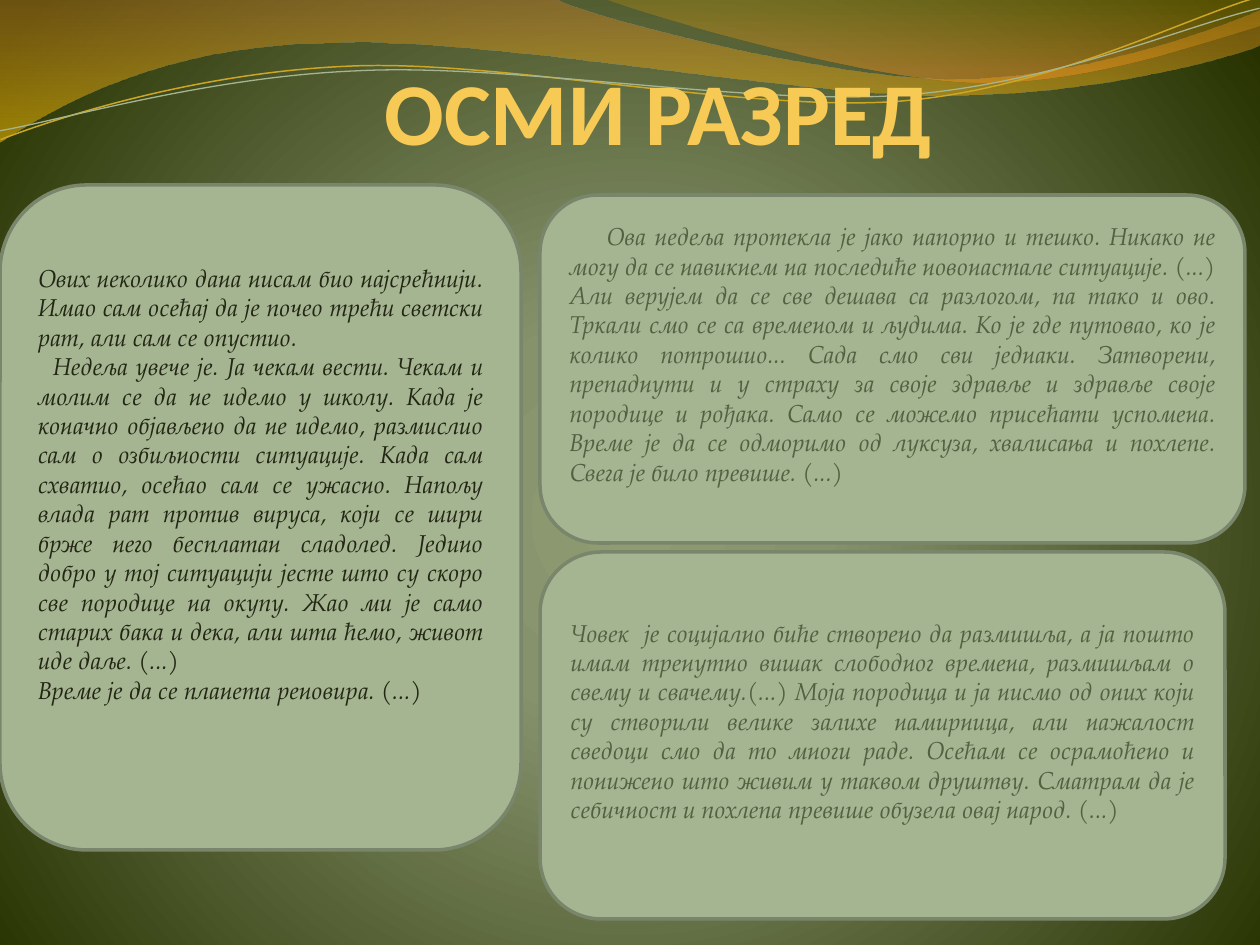
from itertools import islice

from lxml import etree
from pptx import Presentation
from pptx.dml.color import RGBColor
from pptx.enum.shapes import MSO_SHAPE
from pptx.enum.text import MSO_ANCHOR, MSO_AUTO_SIZE, PP_ALIGN
from pptx.oxml.ns import qn
from pptx.util import Emu, Pt

ALTERNATE = MSO_SHAPE.FLOWCHART_ALTERNATE_PROCESS
ROUNDED = MSO_SHAPE.ROUNDED_RECTANGLE
MIDDLE, BOTTOM = MSO_ANCHOR.MIDDLE, MSO_ANCHOR.BOTTOM
CENTER, JUSTIFY = PP_ALIGN.CENTER, PP_ALIGN.JUSTIFY
NO_FIT = MSO_AUTO_SIZE.NONE

SAGE = RGBColor(0xA5, 0xB5, 0x92)
SAGE_EDGE = RGBColor(0x7A, 0x86, 0x6C)
DARK_TEXT = RGBColor(0x22, 0x26, 0x13)
GREEN_TEXT = RGBColor(0x53, 0x61, 0x42)
GOLD = RGBColor(0xF7, 0xCA, 0x56)
GOLD_LINE = RGBColor(0xCC, 0xA6, 0x24)
OLIVE_LIGHT = RGBColor(0x8F, 0x9B, 0x72)
OLIVE = RGBColor(0x86, 0x92, 0x6C)
OLIVE_DARK = RGBColor(0x27, 0x32, 0x00)
COPPER = RGBColor(0xC0, 0x7A, 0x28)
YELLOW = RGBColor(0xF7, 0xBF, 0x00)
MUSTARD = RGBColor(0xC0, 0x97, 0x09)
ORANGE = RGBColor(0xF5, 0x93, 0x20)

TITLE_FONT, BODY_FONT = "Calibri", "TeX Gyre Pagella"
TILT = 357.3

WIDE_WAVE = [(0, 0), (554, -1), (600, 21, 837, 79, 955, 79),
             (1074, 79, 1207, 33, 1260, 11), (1261, 45),
             (1239, 55, 1096, 96, 940, 95), (783, 95, 481, 35, 324, 43),
             (163, 45, 58, 105, -1, 142), (0, 0)]
SHORT_WAVE = [(604, -1), (641, 14, 859, 78, 969, 82),
              (1079, 87, 1211, 40, 1260, 26), (1260, 0), (604, -1)]
GOLD_CURVE = [(-2, 110), (58, 90, 199, 52, 350, 53),
              (499, 53, 745, 118, 896, 114), (1049, 109, 1184, 45, 1260, 27)]
SAGE_CURVE = [(-2, 101), (57, 94, 207, 57, 357, 58),
              (509, 57, 750, 112, 902, 108), (1052, 104, 1186, 52, 1262, 38)]

WAR_TEXT = [
    ("Ових неколико дана нисам био најсрећнији. Имао сам осећај да је почео трећи "
     "светски рат, али сам се опустио.", 0),
    ("Недеља увече је. Ја чекам вести. Чекам и молим се да не идемо у школу. Када је "
     "коначно објављено да не идемо, размислио сам о озбиљности ситуације. Када сам "
     "схватио, осећао сам се ужасно. Напољу влада рат против вируса, који се шири брже "
     "него бесплатан сладолед. Једино добро у тој ситуацији јесте што су скоро све "
     "породице на окупу. Жао ми је само старих бака и дека, али шта ћемо, живот иде "
     "даље. (...)", 15),
    ("Време је да се планета реновира. (...)", 0),
]
WEEK_TEXT = [
    ("Ова недеља протекла је јако напорно и тешко. Никако не могу да се навикнем на "
     "последиће новонастале ситуације. (...) Али верујем да се све дешава са разлогом, "
     "па тако и ово. Тркали смо се са временом и људима. Ко је где путовао, ко је колико "
     "потрошио... Сада смо сви једнаки. Затворени, препаднути и у страху за своје "
     "здравље и здравље своје породице и рођака. Само се можемо присећати успомена. "
     "Време је да се одморимо од луксуза, хвалисања и похлепе. Свега је било превише. "
     "(...)", 37),
]
SOCIETY_TEXT = [
    ("Човек  је социјално биће створено да размишља, а ја пошто имам тренутно вишак "
     "слободног времена, размишљам о свему и свачему.(...) Моја породица и ја нисмо од "
     "оних који су створили велике залихе намирница, али нажалост сведоци смо да то "
     "многи раде. Осећам се осрамоћено и понижено што живим у таквом друштву. Сматрам "
     "да је себичност и похлепа превише обузела овај народ. (...)", 0),
]


def px(n):
    """Turn pixels into EMU."""
    return Emu(round(n * 914400 / 126))


def set_stops(element, stops):
    """Replace the gradient inside element with the stops and return it."""
    grad = element.find(".//" + qn("a:gradFill"))
    grad.clear()
    gs_list = etree.SubElement(grad, qn("a:gsLst"))
    for pos, color, alpha in stops:
        gs = etree.SubElement(gs_list, qn("a:gs"), pos=str(pos * 1000))
        clr = etree.SubElement(gs, qn("a:srgbClr"), val=str(color))
        if alpha < 100:
            etree.SubElement(clr, qn("a:alpha"), val=str(alpha * 1000))
    return grad


class Deck:
    """Holds the style and the current slide."""

    def __init__(self):
        """Open a slide with a title."""
        self.prs = Presentation()
        self.prs.slide_width, self.prs.slide_height = px(1260), px(945)
        self.s = self.prs.slides.add_slide(self.prs.slide_layouts[5])

    def background(self, stops):
        """Fill the slide with a radial gradient."""
        self.s.background.fill.gradient()
        grad = set_stops(self.s.element, stops)
        path = etree.SubElement(grad, qn("a:path"), path="circle")
        etree.SubElement(path, qn("a:fillToRect"), l="10000", t="110000",
                         r="10000", b="100000")

    def outline(self, segments, close):
        """Add a freeform from straight and cubic segments."""
        points = [(px(x), px(y)) for seg in segments
                  for x, y in zip(seg[::2], seg[1::2])]
        builder = self.s.shapes.build_freeform(*points[0])
        builder.add_line_segments(points[1:], close=close)
        sp = builder.convert_to_shape()
        sp.shadow.inherit = False
        steps = iter(sp.element.findall(".//" + qn("a:lnTo")))
        for seg in segments[1:]:
            first, *others = islice(steps, len(seg) // 2)
            if others:
                first.tag = qn("a:cubicBezTo")
            for step in others:
                first.append(step[0])
                step.getparent().remove(step)
        return sp

    def wave(self, segments, stops):
        """Add a closed wave with a vertical gradient."""
        sp = self.outline(segments, True)
        sp.line.fill.background()
        sp.fill.gradient()
        grad = set_stops(sp.element, stops)
        etree.SubElement(grad, qn("a:lin"), ang="5400000", scaled="1")

    def curve(self, segments, color, width):
        """Add an open, slightly tilted line."""
        sp = self.outline(segments, False)
        sp.rotation = TILT
        sp.fill.background()
        sp.line.color.rgb = color
        sp.line.width = Pt(width)

    def format_runs(self, p, font, size, color):
        """Set the font of every run in a paragraph."""
        for r in p.runs:
            r.font.name, r.font.size = font, Pt(size)
            r.font.color.rgb = color

    def title(self, text, x, y, w, h):
        """Place the title in front of the waves."""
        sp = self.s.shapes.title
        sp.left, sp.top, sp.width, sp.height = px(x), px(y), px(w), px(h)
        sp.element.getparent().append(sp.element)
        tf = sp.text_frame
        tf.text = text
        tf.auto_size, tf.vertical_anchor = NO_FIT, BOTTOM
        tf.margin_left = tf.margin_top = tf.margin_bottom = 0
        tf.margin_right = px(2)
        p = tf.paragraphs[0]
        p.alignment = CENTER
        self.format_runs(p, TITLE_FONT, 50.4, GOLD)
        p.runs[0].font.bold = True

    def card(self, kind, x, y, w, h, paragraphs, color, bottom):
        """Add a rounded card with justified italic text."""
        sp = self.s.shapes.add_shape(kind, px(x), px(y), px(w), px(h))
        sp.shadow.inherit = False
        sp.fill.solid()
        sp.fill.fore_color.rgb = SAGE
        sp.line.color.rgb, sp.line.width = SAGE_EDGE, Pt(2)
        tf = sp.text_frame
        tf.word_wrap, tf.vertical_anchor = True, MIDDLE
        tf.margin_bottom = px(bottom)
        tf.text = "\n".join(text for text, _ in paragraphs)
        for p, (_, indent) in zip(tf.paragraphs, paragraphs):
            p.alignment = JUSTIFY
            p._p.get_or_add_pPr().set("indent", str(px(indent)))
            self.format_runs(p, BODY_FONT, 14, color)
            p.runs[0].font.italic = True


def main():
    """Build the slide."""
    deck = Deck()
    deck.background([(0, OLIVE_LIGHT, 100), (25, OLIVE, 100), (100, OLIVE_DARK, 100)])
    deck.wave(WIDE_WAVE, [(0, COPPER, 45), (100, YELLOW, 55)])
    deck.wave(SHORT_WAVE, [(0, MUSTARD, 30), (80, ORANGE, 45)])
    deck.curve(GOLD_CURVE, GOLD_LINE, 0.85)
    deck.curve(SAGE_CURVE, SAGE, 0.75)
    deck.title("ОСМИ РАЗРЕД", 174, 56, 971, 107)
    deck.card(ALTERNATE, 0, 185, 521, 665, WAR_TEXT, DARK_TEXT, 74)
    deck.card(ALTERNATE, 540, 195, 705, 348, WEEK_TEXT, GREEN_TEXT, 37)
    deck.card(ROUNDED, 540, 552, 685, 367, SOCIETY_TEXT, GREEN_TEXT, 36)
    deck.prs.save("out.pptx")


if __name__ == "__main__":
    main()
